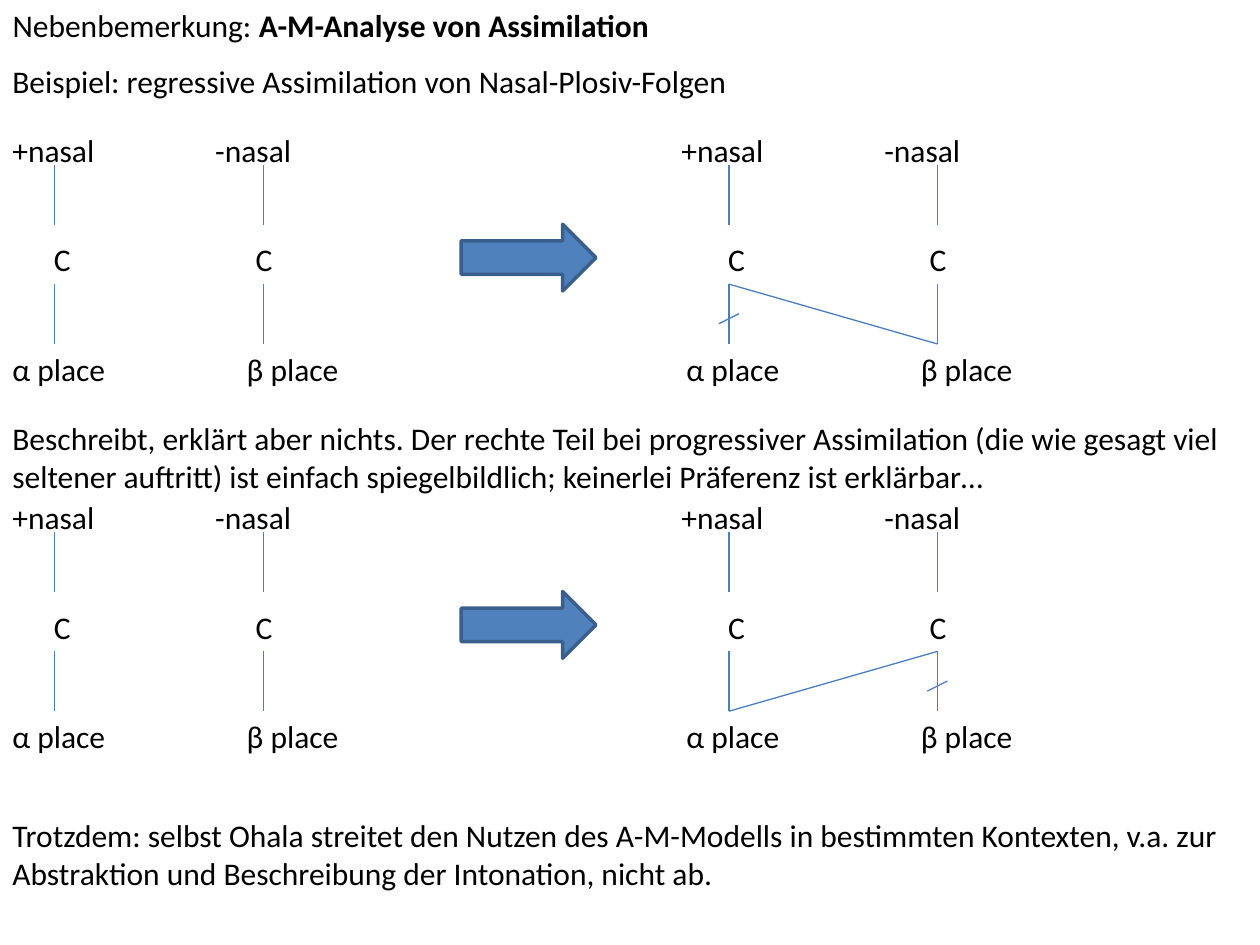
import pptx
import pptx.util
import pptx.dml.color
import pptx.enum.shapes
import pptx.enum.text
import pptx.oxml.ns
from lxml import etree

COLS, ROWS = 100, 75
HUES = {"text": "000000", "line": "4B7EBC", "fill": "4F81BD", "edge": "3A5F8C"}


def rgb(name):
    return pptx.dml.color.RGBColor.from_string(HUES[name])


class Board:
    """Holds the style and the slide; lengths are grid columns and rows."""

    def __init__(self, deck):
        self.font, self.size = "Calibri", pptx.util.Pt(18)
        self.col = deck.slide_width / COLS
        self.row = deck.slide_height / ROWS
        self.slide = deck.slides.add_slide(deck.slide_layouts[5])
        self.shapes = self.slide.shapes

    def place(self, x, y):
        return round(x * self.col), round(y * self.row)

    def style(self, frame):
        frame.word_wrap = True
        frame.auto_size = pptx.enum.text.MSO_AUTO_SIZE.NONE
        frame.vertical_anchor = pptx.enum.text.MSO_ANCHOR.TOP
        for par in frame.paragraphs:
            par.alignment = pptx.enum.text.PP_ALIGN.LEFT
            for run in par.runs:
                run.font.name, run.font.size = self.font, self.size
                run.font.color.rgb = rgb("text")

    def title(self, plain, strong):
        box = self.shapes.title
        box.left, box.top = self.place(0, 0)
        box.width, box.height = self.place(COLS, 4)
        par = box.text_frame.paragraphs[0]
        par.text = plain
        run = par.add_run()
        run.text = strong
        run.font.bold = True
        self.style(box.text_frame)

    def text(self, words, x, y, wide=12, high=4):
        box = self.shapes.add_textbox(*self.place(x, y), *self.place(wide, high))
        box.text_frame.text = words
        self.style(box.text_frame)

    def line(self, x1, y1, x2, y2):
        link = self.shapes.add_connector(
            pptx.enum.shapes.MSO_CONNECTOR.STRAIGHT,
            *self.place(x1, y1), *self.place(x2, y2))
        link.line.color.rgb = rgb("line")
        link.line.width = pptx.util.Pt(0.75)
        etree.SubElement(link._element.spPr, pptx.oxml.ns.qn("a:effectLst"))

    def arrow(self, x, y, wide, high):
        shape = self.shapes.add_shape(
            pptx.enum.shapes.MSO_SHAPE.RIGHT_ARROW,
            *self.place(x, y), *self.place(wide, high))
        shape.shadow.inherit = False
        shape.fill.solid()
        shape.fill.fore_color.rgb = rgb("fill")
        shape.line.color.rgb = rgb("edge")
        shape.line.width = pptx.util.Pt(2)

    def tree(self, x, y):
        """Draw two segments with their nasal and place features."""
        nasal = x - 0.4 if x else x
        self.text("+nasal", nasal, y)
        self.text("-nasal", nasal + 16.1, y)
        for label, shift, drop in (
                ("C", 3.3, 8.7), ("C", 19.3, 8.7),
                ("α place", 0, 17.4), ("β place", 18.6, 17.4)):
            self.text(label, x + shift, y + drop)
        for stem in (4.35, 20.9):
            for drop in (3.2, 12.65):
                self.line(x + stem, y + drop, x + stem, y + drop + 4.75)

    def rule(self, y, source, target):
        """Draw a rule: the target's place link is cut, the source's spreads."""
        right = 53.5
        self.tree(0, y)
        self.tree(right, y)
        self.arrow(36.6, y + 7.9, 10.7, 5.3)
        self.line(right + source, y + 17.4, right + target, y + 12.65)
        cut = right + target
        self.line(cut - 0.8, y + 15.8, cut + 0.8, y + 15)


def main():
    deck = pptx.Presentation()
    deck.slide_width = pptx.util.Inches(10)
    deck.slide_height = pptx.util.Inches(7.5)
    board = Board(deck)
    board.title("Nebenbemerkung: ", "A-M-Analyse von Assimilation")
    board.text("Beispiel: regressive Assimilation von Nasal-Plosiv-Folgen",
               0, 4.4, 77.6)
    board.rule(9.9, source=20.9, target=4.35)
    board.text("Beschreibt, erklärt aber nichts. Der rechte Teil bei progressiver "
               "Assimilation (die wie gesagt viel seltener auftritt) ist einfach "
               "spiegelbildlich; keinerlei Präferenz ist erklärbar…",
               0, 32.8, COLS, 7.1)
    board.rule(39.05, source=4.35, target=20.9)
    board.text("Trotzdem: selbst Ohala streitet den Nutzen des A-M-Modells in "
               "bestimmten Kontexten, v.a. zur Abstraktion und Beschreibung der "
               "Intonation, nicht ab.", 0, 64.3, COLS, 7.1)
    deck.save("out.pptx")


if __name__ == "__main__":
    main()
